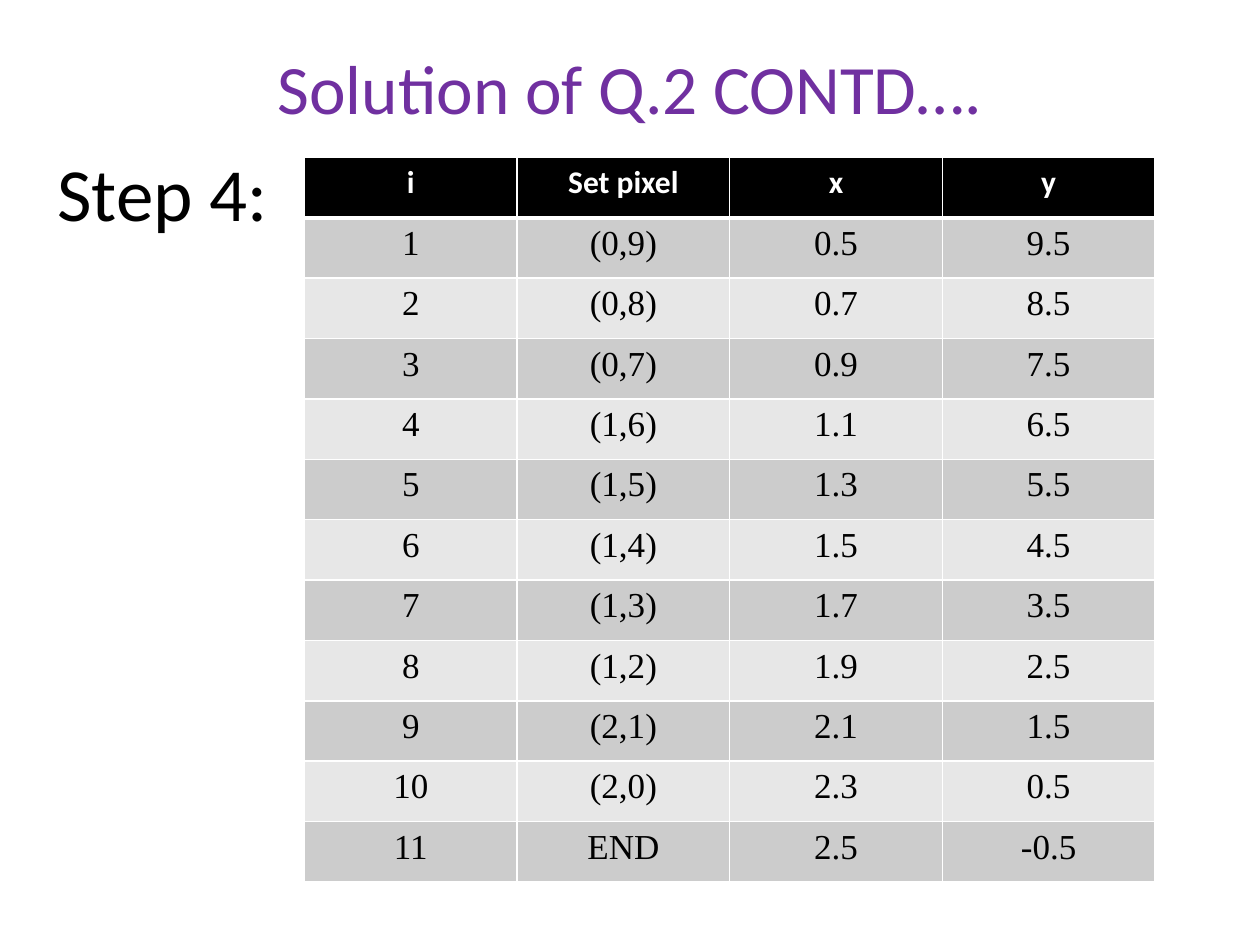
from lxml.etree import SubElement
from pptx import Presentation
from pptx.dml.color import RGBColor
from pptx.enum.text import MSO_ANCHOR as Anchor, PP_ALIGN as Align
from pptx.oxml.ns import qn
from pptx.util import Pt

COLORS = {
    "title": "7030A0",
    "text": "000000",
    "header": "000000",
    "header_text": "FFFFFF",
    "odd_row": "CCCCCC",
    "even_row": "E7E7E7",
    "border": "FFFFFF",
}
HEADINGS = ("i", "Set pixel", "x", "y")
STEPS = (
    ("1", "(0,9)", "0.5", "9.5"),
    ("2", "(0,8)", "0.7", "8.5"),
    ("3", "(0,7)", "0.9", "7.5"),
    ("4", "(1,6)", "1.1", "6.5"),
    ("5", "(1,5)", "1.3", "5.5"),
    ("6", "(1,4)", "1.5", "4.5"),
    ("7", "(1,3)", "1.7", "3.5"),
    ("8", "(1,2)", "1.9", "2.5"),
    ("9", "(2,1)", "2.1", "1.5"),
    ("10", "(2,0)", "2.3", "0.5"),
    ("11", "END", "2.5", "-0.5"),
)


def write_text(frame, text, *, size, color, font="Calibri", bold=False):
    para = frame.paragraphs[0]
    para.alignment = Align.CENTER
    span = para.add_run()
    span.text = text
    span.font.name = font
    span.font.size = Pt(size)
    span.font.bold = bold
    span.font.color.rgb = RGBColor.from_string(COLORS[color])


def add_heading(page, box, text, **style):
    frame = page.shapes.add_textbox(*map(Pt, box)).text_frame
    frame.word_wrap = True
    frame.vertical_anchor = Anchor.MIDDLE
    write_text(frame, text, **style)


def set_borders(cell, top, bottom):
    properties = cell._tc.get_or_add_tcPr()
    for side, width in (("L", 1), ("R", 1), ("T", top), ("B", bottom)):
        line = SubElement(properties, qn(f"a:ln{side}"), w=str(Pt(width)))
        fill = SubElement(line, qn("a:solidFill"))
        SubElement(fill, qn("a:srgbClr"), val=COLORS["border"])


def add_step_table(page, box):
    rows = (HEADINGS, *STEPS)
    table = page.shapes.add_table(len(rows), len(HEADINGS), *map(Pt, box)).table
    for column in table.columns:
        column.width = Pt(box[2] / len(HEADINGS))
    for row in table.rows:
        row.height = Pt(box[3] / len(rows))
    header_style = dict(size=18, color="header_text", bold=True)
    body_style = dict(size=20, color="text", font="Times New Roman")
    for index, values in enumerate(rows):
        if index == 0:
            fill, style = "header", header_style
        else:
            fill, style = ("odd_row" if index % 2 else "even_row"), body_style
        for column, value in enumerate(values):
            cell = table.cell(index, column)
            set_borders(cell, top=3 if index == 1 else 1, bottom=3 if index == 0 else 1)
            cell.fill.solid()
            cell.fill.fore_color.rgb = RGBColor.from_string(COLORS[fill])
            write_text(cell.text_frame, value, **style)


def main():
    deck = Presentation()
    deck.slide_width, deck.slide_height = Pt(720), Pt(540)
    page = deck.slides.add_slide(deck.slide_layouts[6])
    add_heading(page, (36, 21.6, 648, 56.4), "Solution of Q.2 CONTD….", size=39.6, color="title")
    add_step_table(page, (174, 90, 486, 414))
    add_heading(page, (24, 60, 138, 98.4), "Step 4:", size=42.9, color="text")
    deck.save("out.pptx")


if __name__ == "__main__":
    main()
